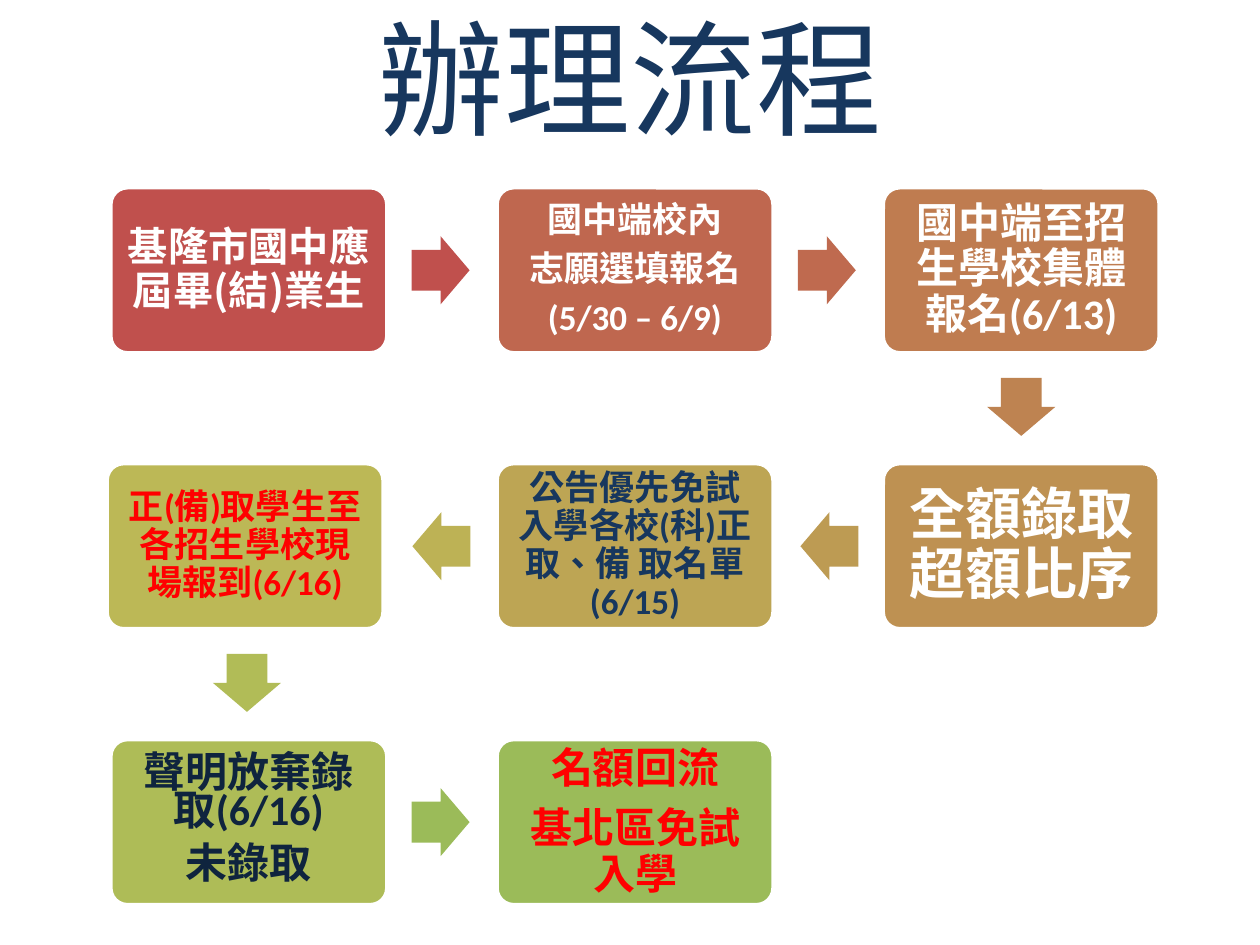
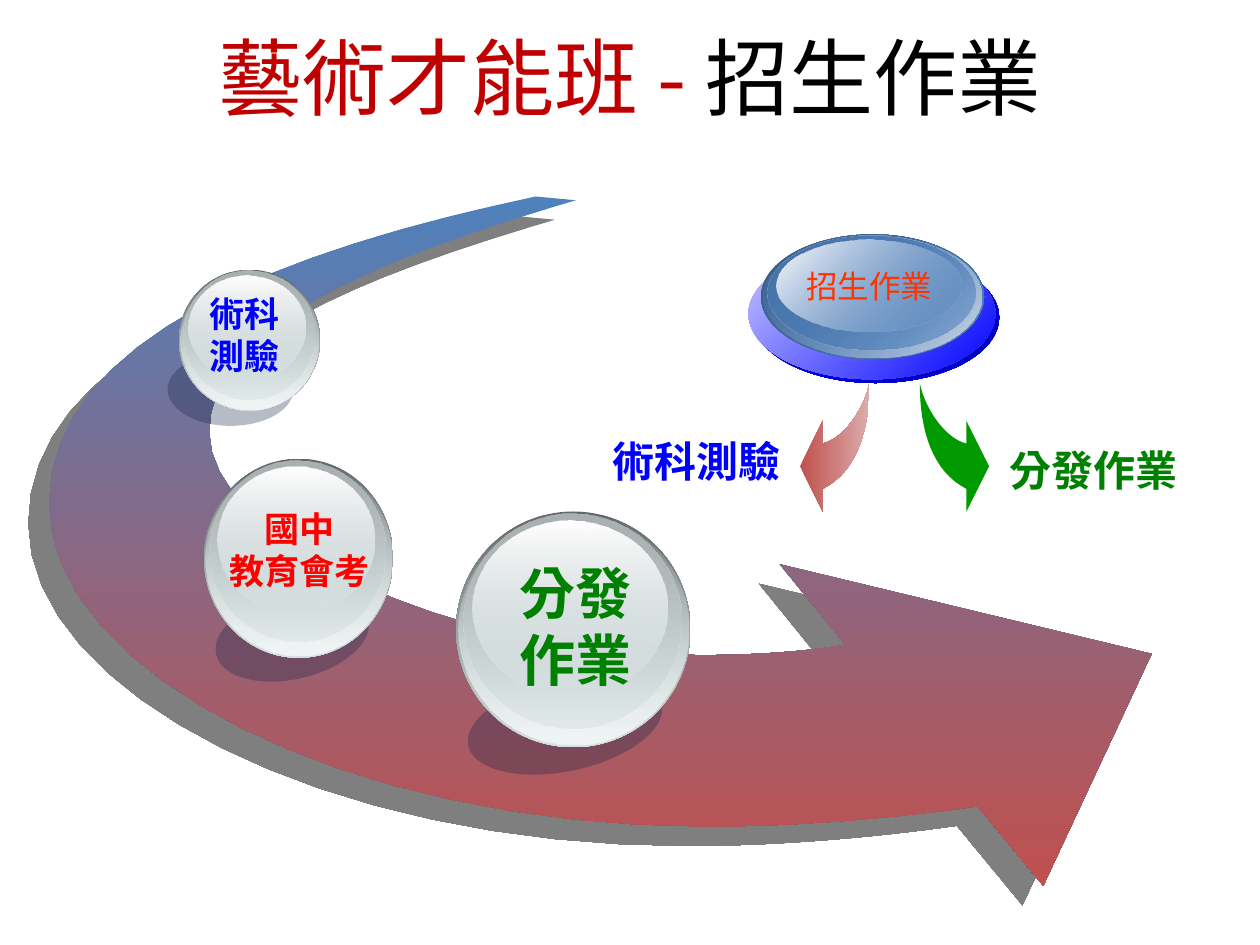
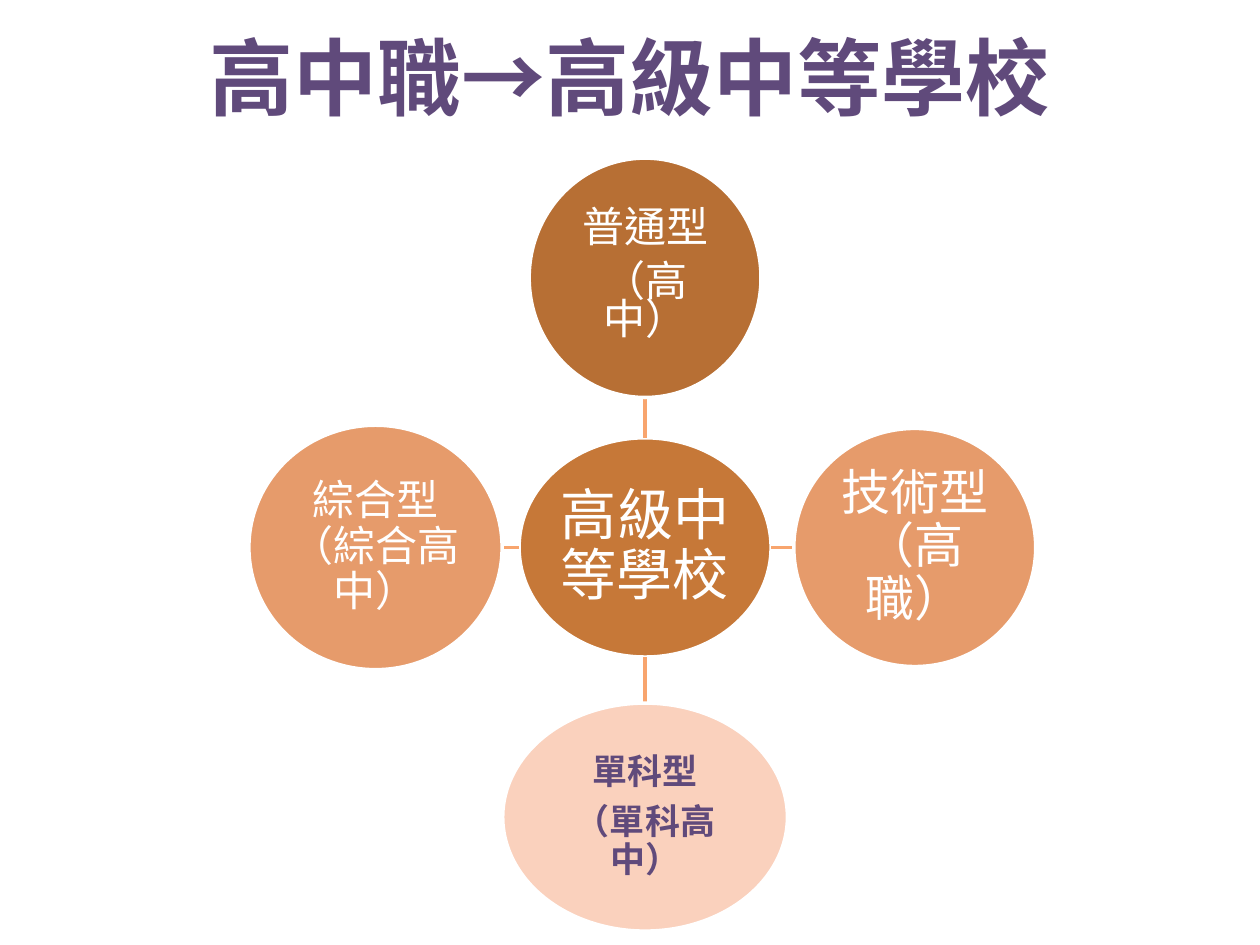
from pptx import Presentation
from pptx.dml.color import RGBColor
from pptx.enum.shapes import MSO_CONNECTOR, MSO_SHAPE
from pptx.enum.text import MSO_ANCHOR, MSO_AUTO_SIZE, PP_ALIGN
from pptx.oxml.ns import qn
from pptx.util import Inches, Pt
from lxml.etree import SubElement

COLORS = {
    "white": "FFFFFF", "black": "000000", "navy": "17375E", "ink": "0F243E",
    "red": "FF0000", "dark_red": "C00000", "blue": "0000FF", "green": "008000",
    "orange": "FF3300", "purple": "604A7B", "accent_blue": "4F81BD",
    "accent_red": "C0504D", "pale_red": "DAADAC", "arrow_green": "009900",
    "ball_shadow": "0F2145", "ball_edge": "636869", "ball_mid": "AAB2B3",
    "ball_light": "D6E1E2", "ball_bright": "F1F5F5", "pill_edge": "395C87",
    "pill_mid": "4775AB", "pill_bright": "D7DEEB", "deep_blue": "0000BA",
    "pale_blue": "C6C6FF", "hub": "C67838", "spoke": "F8A56E",
    "brown": "B76F34", "peach": "E69B6B", "pale_peach": "FAD1BD",
}
CJK = "Noto Sans CJK SC"
LATIN = "Calibri"
TITLE_FONT = "Arial"
SPACE_AFTER_RATIO = 0.35

STEP_SIZE = (2.19, 1.31)
STEP_ORIGIN = (0.88, 1.49)
STEP_PITCH = (3.065, 2.19)
STEPS = [
    {"cell": (0, 0), "fill": "C0504D", "arrow": "C0504D", "lines": ["基隆市國中應屆畢(結)業生"],
     "size": 23, "font": CJK, "inset": 0.09},
    {"cell": (1, 0), "fill": "BF674F", "arrow": "BF6A4F", "size": 20, "inset": 0.09,
     "lines": ["國中端校內", "志願選填報名", "(5/30 – 6/9)"], "spacing": Pt(21)},
    {"cell": (2, 0), "fill": "BF7C50", "arrow": "BE8351", "size": 24, "inset": 0.1,
     "lines": ["國中端至招生學校集體報名(6/13)"]},
    {"cell": (2, 1), "fill": "BE9152", "arrow": "BD9B53", "size": 32, "inset": 0.13,
     "lines": ["全額錄取超額比序"], "font": CJK},
    {"cell": (1, 1), "fill": "BDA554", "arrow": "BDB255", "size": 20, "inset": 0.09,
     "lines": ["公告優先免試入學各校(科)正取、備 取名單(6/15)"], "color": "navy"},
    {"cell": (0, 1), "fill": "BCB856", "arrow": "B1BC57", "size": 20, "inset": 0.09,
     "lines": ["正(備)取學生至各招生學校現場報到(6/16)"], "color": "red", "nudge": -0.03},
    {"cell": (0, 2), "fill": "AEBC57", "arrow": "9BBB59", "size": 24, "inset": 0.1,
     "lines": ["聲明放棄錄取(6/16)", "未錄取"], "color": "ink", "spacing": Pt(22)},
    {"cell": (1, 2), "fill": "9BBB59", "size": 24, "inset": 0.1, "font": CJK,
     "lines": ["名額回流", "基北區免試入學"], "color": "red", "spacing": Pt(26)},
]

CURVE_STEPS = 16
SWOOSH_OUTER_EDGE = [
    [(4.25, 1.56), (2.29, 1.98), (0.39, 2.67), (0.39, 4)],
    [(0.39, 4), (0.39, 5.34), (2.74, 6.56), (5.62, 6.56)],
    [(5.62, 6.56), (6.3, 6.56), (7.05, 6.5), (7.76, 6.4)],
]
SWOOSH_HEAD = [(8.28, 7.03), (9.14, 5.19), (6.19, 4.48)]
SWOOSH_INNER_EDGE = [
    [(6.71, 5.12), (6.32, 5.18), (5.93, 5.2), (5.54, 5.2)],
    [(5.54, 5.2), (3.54, 5.2), (1.66, 4.27), (1.66, 3.43)],
    [(1.66, 3.43), (1.66, 2.58), (3.03, 2.04), (4.57, 1.59)],
]
BRANCH_OUTER_EDGE = [[(6.9, 3.04), (6.9, 3.42), (6.8, 3.74), (6.53, 3.88)]]
BRANCH_HEAD = [(6.53, 4.06), (6.35, 3.7), (6.53, 3.34)]
BRANCH_INNER_EDGE = [[(6.53, 3.52), (6.7, 3.48), (6.86, 3.24), (6.9, 3.04)]]
BRANCH_MIRROR = 14.2

GLOSS_FRAMES = [(0, 0, 1, 1), (0.01, 0.01, 0.98, 0.98),
                (0.03, 0.01, 0.93, 0.91), (0.07, 0.04, 0.83, 0.74)]
BALL_GLOSS = [("ball_edge", "ball_light", 100, 100), ("ball_light", "ball_bright", 0, 100),
              ("ball_mid", "ball_light", 100, 48), ("white", "ball_light", 100, 38)]
PILL_GLOSS = [("pill_edge", "accent_blue", 100, 100), ("accent_blue", "pill_bright", 0, 100),
              ("pill_mid", "accent_blue", 100, 48), ("white", "accent_blue", 100, 38)]
BALLS = [
    {"frame": (3.62, 4.06, 1.86, 1.87), "shadow": (3.7, 5.39, 1.57, 0.73), "tilt": 348,
     "label": (3.98, 4.38, 1.17, 1.18), "lines": ["分發", "作業"], "size": 32, "color": "green"},
    {"frame": (1.62, 3.64, 1.5, 1.58), "shadow": (1.7, 4.72, 1.24, 0.67), "tilt": 347,
     "label": (1.72, 3.98, 1.32, 0.77), "lines": ["國中", "教育會考"], "size": 20, "color": "red"},
    {"frame": (1.42, 2.14, 1.12, 1.12), "shadow": (1.33, 2.8, 1, 0.58), "tilt": 0,
     "label": (1.56, 2.27, 0.76, 0.77), "lines": ["術科", "測驗"], "size": 20, "color": "blue"},
]

HUB_CENTER = (5.12, 4.345)
HUB_SIZE = (2, 1.74)
SPOKE_LENGTH = 2.14
SCHOOL_TYPES = [
    {"toward": (0, -1), "extent": (1.84, 1.9), "fill": "brown", "size": 24,
     "lines": ["普通型", "（高中）"], "spacing": Pt(22)},
    {"toward": (1, 0), "extent": (1.92, 1.89), "fill": "peach", "size": 28,
     "lines": ["技術型（高職）"]},
    {"toward": (0, 1), "extent": (2.26, 1.81), "fill": "pale_peach", "size": 20, "bold": True,
     "lines": ["單科型", "（單科高中）"], "color": "purple"},
    {"toward": (-1, 0), "extent": (2.01, 1.94), "fill": "peach", "size": 24,
     "lines": ["綜合型（綜合高中）"]},
]


def rgb(color):
    return RGBColor.from_string(COLORS.get(color, color))


def set_values(target, values):
    for name, value in values.items():
        setattr(target, name, value)


def set_font(run, size, color, font, bold):
    set_values(run.font, {"size": Pt(size), "bold": bold, "name": font})
    run.font.color.rgb = rgb(color)
    properties = run.font._element
    properties.set("lang", "zh-TW")
    SubElement(properties, qn("a:ea"), typeface=CJK)


def write(shape, lines, size, color="white", font=LATIN, bold=False, spacing=1.0,
          after=0, inset=(0.1, 0.05), wrap=True, anchor=MSO_ANCHOR.MIDDLE):
    frame = shape.text_frame
    side, end = Inches(inset[0]), Inches(inset[1])
    set_values(frame, {"word_wrap": wrap, "vertical_anchor": anchor,
                       "margin_left": side, "margin_right": side,
                       "margin_top": end, "margin_bottom": end})
    for index, line in enumerate(lines):
        paragraph = frame.add_paragraph() if index else frame.paragraphs[0]
        set_values(paragraph, {"alignment": PP_ALIGN.CENTER, "line_spacing": spacing,
                               "space_after": Pt(after)})
        run = paragraph.add_run()
        run.text = line
        set_font(run, size, color, font, bold)


def add_title_slide(presentation, runs, size, font=TITLE_FONT, bold=False):
    slide = presentation.slides.add_slide(presentation.slide_layouts[5])
    title = slide.shapes.title
    set_values(title, {"left": Inches(0), "top": Inches(0.02),
                       "width": Inches(10), "height": Inches(1.17)})
    set_values(title.text_frame, {"auto_size": MSO_AUTO_SIZE.NONE, "word_wrap": True,
                                  "vertical_anchor": MSO_ANCHOR.MIDDLE})
    paragraph = title.text_frame.paragraphs[0]
    paragraph.alignment = PP_ALIGN.CENTER
    for text, color in runs:
        run = paragraph.add_run()
        run.text = text
        set_font(run, size, color, font, bold)
    return slide


def set_alphas(shape, alphas):
    for color, alpha in zip(shape.element.spPr.iter(qn("a:srgbClr")), alphas):
        if alpha < 100:
            SubElement(color, qn("a:alpha"), val=str(alpha * 1000))


def fill_solid(shape, color, outline=None, alpha=100):
    shape.shadow.inherit = False
    shape.fill.solid()
    shape.fill.fore_color.rgb = rgb(color)
    set_alphas(shape, [alpha])
    if outline:
        shape.line.color.rgb = rgb(outline)
        shape.line.width = Pt(2)
    else:
        shape.line.fill.background()


def fill_gradient(shape, start, end, angle, alphas=(100, 100)):
    shape.shadow.inherit = False
    shape.fill.gradient()
    shape.fill.gradient_angle = -angle % 360
    for stop, color in zip(shape.fill.gradient_stops, (start, end)):
        stop.color.rgb = rgb(color)
    set_alphas(shape, alphas)
    shape.line.fill.background()


def cast_shadow(shape, distance, direction, alpha):
    effects = shape.element.spPr.find(qn("a:effectLst"))
    shadow = SubElement(effects, qn("a:outerShdw"), dist=str(Pt(distance)),
                        dir=str(direction * 60000), algn="ctr", rotWithShape="0")
    color = SubElement(shadow, qn("a:srgbClr"), val=COLORS["black"])
    SubElement(color, qn("a:alpha"), val=str(alpha * 1000))


def add_preset(slide, kind, frame, adjustments=()):
    shape = slide.shapes.add_shape(kind, *map(Inches, frame))
    for index, value in enumerate(adjustments):
        shape.adjustments[index] = value
    return shape


def bezier_point(controls, t):
    weights = ((1 - t) ** 3, 3 * t * (1 - t) ** 2, 3 * t ** 2 * (1 - t), t ** 3)
    return tuple(sum(weight * value for weight, value in zip(weights, axis))
                 for axis in zip(*controls))


def trace_edge(curves):
    return [bezier_point(controls, step / CURVE_STEPS)
            for controls in curves for step in range(CURVE_STEPS + 1)]


def curved_arrow(outer_edge, head, inner_edge):
    return trace_edge(outer_edge) + head + trace_edge(inner_edge)


def add_outline(slide, points):
    corners = [(Inches(x), Inches(y)) for x, y in points]
    builder = slide.shapes.build_freeform(*corners[0])
    builder.add_line_segments(corners[1:], close=True)
    return builder.convert_to_shape()


def add_label(slide, frame, lines, **text):
    write(slide.shapes.add_textbox(*map(Inches, frame)), lines, font=CJK, **text)


def add_glossy(slide, frame, layers, angle):
    left, top, width, height = frame
    for (x, y, w, h), (start, end, *alphas) in zip(GLOSS_FRAMES, layers):
        shape = add_preset(slide, MSO_SHAPE.OVAL, (left + x * width, top + y * height,
                                                   w * width, h * height))
        fill_gradient(shape, start, end, angle, alphas)
    return shape


def add_ball(slide, ball):
    shadow = add_preset(slide, MSO_SHAPE.OVAL, ball["shadow"])
    shadow.rotation = ball["tilt"]
    fill_solid(shadow, "ball_shadow", alpha=30)
    add_glossy(slide, ball["frame"], BALL_GLOSS, 90)
    add_label(slide, ball["label"], ball["lines"], size=ball["size"], color=ball["color"],
              bold=True, wrap=False, anchor=MSO_ANCHOR.TOP)


def step_center(step):
    left, top = (start + pitch * index for start, pitch, index
                 in zip(STEP_ORIGIN, STEP_PITCH, step["cell"]))
    return left + step.get("nudge", 0) + STEP_SIZE[0] / 2, top + STEP_SIZE[1] / 2


def add_step(slide, step):
    x, y = step_center(step)
    width, height = STEP_SIZE
    box = add_preset(slide, MSO_SHAPE.ROUNDED_RECTANGLE,
                     (x - width / 2, y - height / 2, width, height), [0.1])
    fill_solid(box, step["fill"], "white")
    write(box, step["lines"], step["size"], step.get("color", "white"),
          step.get("font", LATIN), True, step.get("spacing", 0.9),
          SPACE_AFTER_RATIO * step["size"], (step["inset"], step["inset"]))


def add_step_arrow(slide, step, following):
    (x1, y1), (x2, y2) = step_center(step), step_center(following)
    across = following["cell"][0] - step["cell"][0]
    down = following["cell"][1] - step["cell"][1]
    x, y = (x1 + x2) / 2 - 0.01 * across, (y1 + y2) / 2 - 0.01 * down
    arrow = add_preset(slide, MSO_SHAPE.RIGHT_ARROW, (x - 0.23, y - 0.27, 0.46, 0.54), [0.6, 0.5])
    arrow.rotation = 90 if down else 90 * (1 - across)
    fill_solid(arrow, step["arrow"])


def add_bubble(slide, center, extent, fill, lines, size, color="white", bold=False, spacing=0.9):
    (x, y), (width, height) = center, extent
    bubble = add_preset(slide, MSO_SHAPE.OVAL, (x - width / 2, y - height / 2, width, height))
    fill_solid(bubble, fill, "white")
    write(bubble, lines, size, color, bold=bold, spacing=spacing,
          after=SPACE_AFTER_RATIO * size, inset=(0.02, 0.02))


def add_spoke(slide, toward, extent):
    ends = []
    for center, step, hub, bubble in zip(HUB_CENTER, toward, HUB_SIZE, extent):
        ends.append((center + step * hub / 2, center + step * (SPOKE_LENGTH - bubble / 2)))
    (x1, x2), (y1, y2) = ends
    spoke = slide.shapes.add_connector(MSO_CONNECTOR.STRAIGHT, *map(Inches, (x1, y1, x2, y2)))
    spoke.line.color.rgb = rgb("spoke")
    spoke.line.width = Pt(2)
    SubElement(spoke.element.spPr, qn("a:effectLst"))


def build_process(presentation):
    slide = add_title_slide(presentation, [("辦理流程", "navy")], 72)
    for step in STEPS:
        add_step(slide, step)
    for step, following in zip(STEPS, STEPS[1:]):
        add_step_arrow(slide, step, following)


def build_arts_admission(presentation):
    slide = add_title_slide(presentation, [("藝術才能班 - ", "dark_red"), ("招生作業", "black")],
                            48, CJK)
    swoosh = add_outline(slide, curved_arrow(SWOOSH_OUTER_EDGE, SWOOSH_HEAD, SWOOSH_INNER_EDGE))
    fill_gradient(swoosh, "accent_blue", "accent_red", 90)
    cast_shadow(swoosh, distance=16.3, direction=137, alpha=50)
    for ball in BALLS:
        add_ball(slide, ball)

    for frame, text, color in [((4.54, 3.36, 1.97, 0.59), "術科測驗", "blue"),
                               ((7.69, 3.43, 1.97, 0.59), "分發作業", "green")]:
        add_label(slide, frame, [text], size=24, color=color, bold=True, inset=(0, 0.05))
    branch = curved_arrow(BRANCH_OUTER_EDGE, BRANCH_HEAD, BRANCH_INNER_EDGE)
    mirrored_branch = [(BRANCH_MIRROR - x, y) for x, y in branch]
    fill_gradient(add_outline(slide, branch), "accent_red", "pale_red", 0)
    fill_solid(add_outline(slide, mirrored_branch), "arrow_green")

    for frame, start, end in [((5.97, 2, 1.96, 1.04), "blue", "deep_blue"),
                              ((5.94, 1.97, 1.96, 1.04), "pale_blue", "blue")]:
        fill_gradient(add_preset(slide, MSO_SHAPE.OVAL, frame), start, end, 45)
    pill = add_glossy(slide, (6.04, 1.86, 1.77, 0.99), PILL_GLOSS, 45)
    write(pill, ["招生作業"], 18, "orange", CJK, wrap=False)


def build_school_types(presentation):
    slide = add_title_slide(presentation, [("高中職→高級中等學校", "purple")], 48, bold=True)
    add_bubble(slide, HUB_CENTER, HUB_SIZE, "hub", ["高級中等學校"], 32)
    for school in SCHOOL_TYPES:
        toward = school["toward"]
        add_spoke(slide, toward, school["extent"])
        center = [start + step * SPOKE_LENGTH for start, step in zip(HUB_CENTER, toward)]
        add_bubble(slide, center, **{key: value for key, value in school.items()
                                     if key != "toward"})


def main():
    presentation = Presentation()
    set_values(presentation, {"slide_width": Inches(10), "slide_height": Inches(7.5)})
    build_process(presentation)
    build_arts_admission(presentation)
    build_school_types(presentation)
    presentation.save("out.pptx")


if __name__ == "__main__":
    main()
